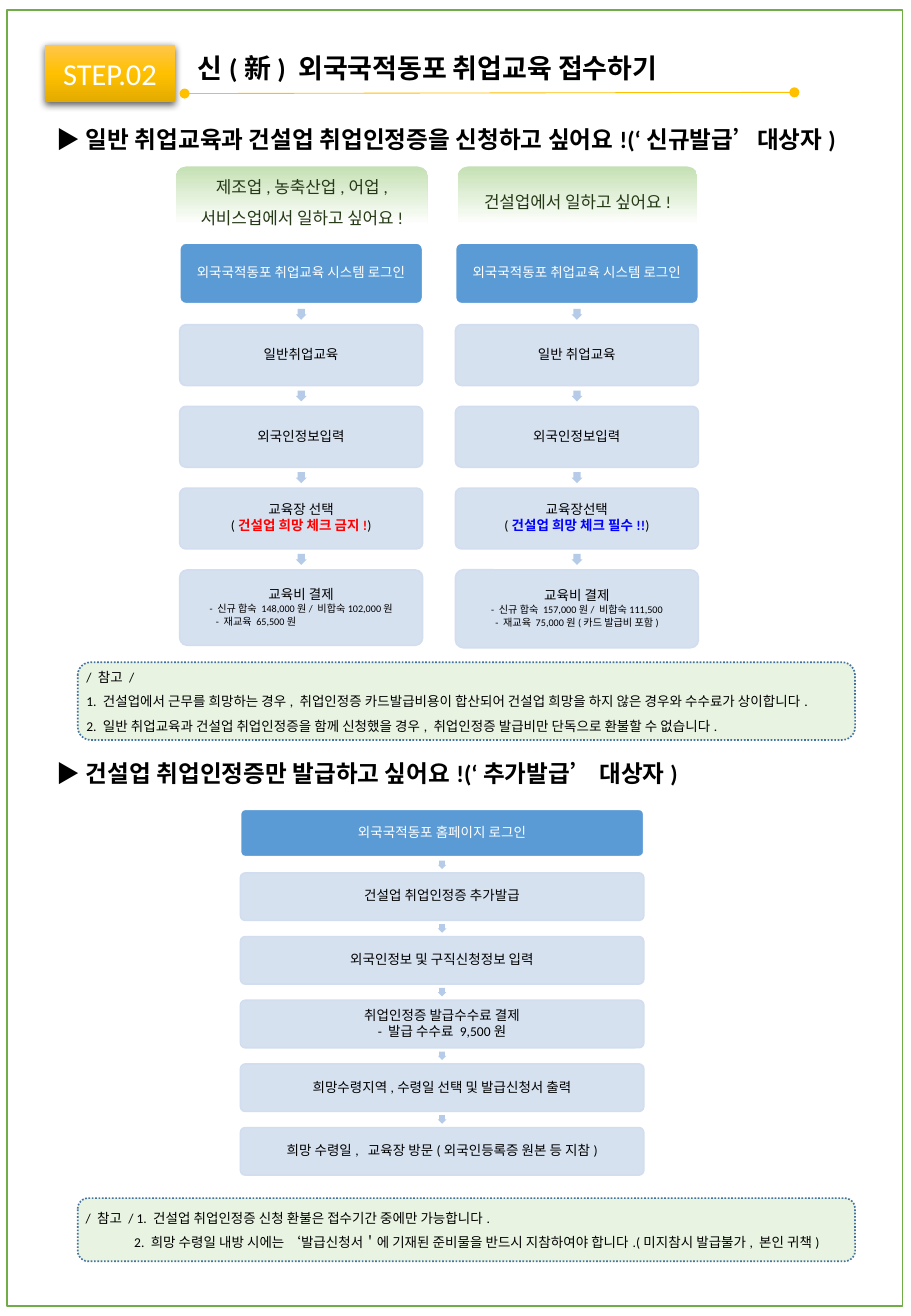
"""Builds the STEP.02 slide on registering for employment training."""
import copy

import lxml.etree
import pptx
import pptx.dml.color
import pptx.enum.dml
import pptx.enum.shapes
import pptx.enum.text
import pptx.oxml
import pptx.oxml.ns
import pptx.util

Inches = pptx.util.Inches
Pt = pptx.util.Pt
RGBColor = pptx.dml.color.RGBColor
Shapes = pptx.enum.shapes.MSO_SHAPE
Align = pptx.enum.text.PP_ALIGN
Anchor = pptx.enum.text.MSO_ANCHOR
qn = pptx.oxml.ns.qn

BLACK = RGBColor(0, 0, 0)
WHITE = RGBColor(0xFF, 0xFF, 0xFF)
RED = RGBColor(0xFF, 0, 0)
PURE_BLUE = RGBColor(0, 0, 0xFF)
BLUE = RGBColor(0x5B, 0x9B, 0xD5)
PALE_BLUE = RGBColor(0xD2, 0xDE, 0xEF)
ARROW_BLUE = RGBColor(0xB5, 0xCB, 0xE7)
NOTE_LINE = RGBColor(0x43, 0x73, 0x9E)
GREEN = RGBColor(0x70, 0xAD, 0x47)
PALE_GREEN = RGBColor(0xE2, 0xF0, 0xD9)
DARK_GREEN = RGBColor(0x25, 0x39, 0x17)
GOLD = RGBColor(0xFF, 0xC0, 0x00)
BADGE_STOPS = [RGBColor(0xFF, 0xC6, 0x4B), GOLD, RGBColor(0xE3, 0xAB, 0x00)]
TAB_STOPS = [RGBColor(0xC5, 0xE0, 0xB4), PALE_GREEN, WHITE]

deck = pptx.Presentation()
deck.slide_width = Inches(7.5)
deck.slide_height = Inches(10.83)
page = deck.slides.add_slide(deck.slide_layouts[5])


def write(box, lines, size, color, margins=(0.1, 0.05, 0.1, 0.05), align=Align.LEFT,
          spacing=1.0, after=0, anchor=Anchor.MIDDLE, bold=False):
    """Fill a shape with lines of (text, size, color, bold) spans; a leading number is an indent."""
    frame = box.text_frame
    frame.word_wrap = True
    frame.vertical_anchor = anchor
    frame.margin_left, frame.margin_top, frame.margin_right, frame.margin_bottom = map(Inches, margins)
    for number, line in enumerate(lines):
        para = frame.paragraphs[0] if number == 0 else frame.add_paragraph()
        para.alignment = align
        para.line_spacing = spacing
        para.space_before = Pt(0)
        para.space_after = Pt(after)
        spans = [(line,)] if isinstance(line, str) else line
        if isinstance(spans[0], float):
            para.alignment = Align.LEFT
            para._p.get_or_add_pPr().set("marL", str(Inches(spans[0])))
            spans = spans[1:]
        for text, *style in spans:
            span_size, span_color, span_bold = style or (size, color, bold)
            span = para.add_run()
            span.text = text
            span.font.name = "Calibri"
            span.font.size = Pt(span_size)
            span.font.color.rgb = span_color
            span.font.bold = span_bold


def add_block(kind, area, fill=None, line=None, alpha=None):
    """Add a preset shape with a plain, gradient or missing fill."""
    block = page.shapes.add_shape(kind, *map(Inches, area))
    block.shadow.inherit = False
    if isinstance(fill, list):
        block.fill.gradient()
        block.fill.gradient_angle = 270
        stop_list = block._element.spPr.find(".//" + qn("a:gsLst"))
        stop_list.append(copy.deepcopy(stop_list[0]))
        for stop, position, color in zip(block.fill.gradient_stops, (0, 0.5, 1), fill):
            stop.position = position
            stop.color.rgb = color
    elif fill is None:
        block.fill.background()
    else:
        block.fill.solid()
        block.fill.fore_color.rgb = fill
    if line is None:
        block.line.fill.background()
    else:
        block.line.color.rgb = line
        block.line.width = Pt(1)
    if alpha:
        color = block._element.spPr.find(qn("a:solidFill"))[0]
        lxml.etree.SubElement(color, qn("a:alpha")).set("val", str(alpha * 1000))
    return block


title = page.shapes.title
title.left, title.top, title.width, title.height = map(Inches, (1.53, 0.37, 4.17, 0.37))
write(title, ["신(新) 외국국적동포 취업교육 접수하기"], 16, BLACK, anchor=Anchor.TOP, bold=True)

add_block(Shapes.RECTANGLE, (0.06, 0.08, 7.37, 10.67), line=GREEN)

badge = add_block(Shapes.RECTANGLE, (0.37, 0.37, 1.07, 0.47), BADGE_STOPS)
write(badge, ["STEP.02"], 18, WHITE, align=Align.CENTER)
badge._element.spPr.find(qn("a:effectLst")).append(pptx.oxml.parse_xml(
    '<a:outerShdw xmlns:a="http://schemas.openxmlformats.org/drawingml/2006/main" blurRad="57150"'
    ' dist="19050" dir="5400000" algn="ctr" rotWithShape="0"><a:srgbClr val="000000">'
    '<a:alpha val="63000"/></a:srgbClr></a:outerShdw>'))

rule = page.shapes.add_connector(pptx.enum.shapes.MSO_CONNECTOR.STRAIGHT,
                                 Inches(1.52), Inches(0.77), Inches(6.54), Inches(0.76))
rule.line.color.rgb = GOLD
rule.line.width = Pt(0.5)
for end in ("a:headEnd", "a:tailEnd"):
    lxml.etree.SubElement(rule.line._ln, qn(end)).set("type", "oval")
lxml.etree.SubElement(rule._element.spPr, qn("a:effectLst"))

headings = [
    (0.98, 7.13, "▶ 일반 취업교육과 건설업 취업인정증을 신청하고 싶어요!(‘신규발급’대상자)"),
    (6.2, 5.75, "▶ 건설업 취업인정증만 발급하고 싶어요!(‘추가발급’ 대상자)"),
]
for top, width, text in headings:
    heading = page.shapes.add_textbox(Inches(0.37), Inches(top), Inches(width), Inches(0.34))
    write(heading, [text], 14, BLACK, anchor=Anchor.TOP, bold=True)

tabs = [
    (1.45, 2.07, ["제조업,농축산업,어업,", "서비스업에서 일하고 싶어요!"]),
    (3.77, 1.97, ["건설업에서 일하고 싶어요!"]),
]
for left, width, lines in tabs:
    tab = add_block(Shapes.ROUND_2_SAME_RECTANGLE, (left, 1.37, width, 0.48), TAB_STOPS)
    write(tab, lines, 10, DARK_GREEN, align=Align.CENTER, spacing=1.5)

plain = (8, BLACK, False)
small = (6, BLACK, False)
general_steps = [
    ["외국국적동포 취업교육 시스템 로그인"],
    ["일반취업교육"],
    ["외국인정보입력"],
    ["교육장 선택", [("(", *plain), ("건설업 희망 체크 금지!", 8, RED, True), (")", *plain)]],
    ["교육비 결제", [("- 신규 합숙 148,000원/ 비합숙102,000원", *small)],
     [0.28, ("- 재교육 65,500원", *small)]],
]
construction_steps = [
    ["외국국적동포 취업교육 시스템 로그인"],
    ["일반 취업교육"],
    ["외국인정보입력"],
    ["교육장선택", [("(", *plain), ("건설업 희망 체크 필수!!", 8, PURE_BLUE, True), (")", *plain)]],
    ["교육비 결제", [("- 신규 합숙 157,000원/ 비합숙111,500", *small)],
     [0.31, ("- 재교육 75,000원(카드 발급비 포함)", *small)]],
]
additional_steps = [
    ["외국국적동포 홈페이지 로그인"],
    ["건설업 취업인정증 추가발급"],
    ["외국인정보 및 구직신청정보 입력"],
    ["취업인정증 발급수수료 결제", "- 발급 수수료 9,500원"],
    ["희망수령지역,수령일 선택 및 발급신청서 출력"],
    ["희망 수령일,  교육장 방문(외국인등록증 원본 등 지참)"],
]
flows = [
    (1.48, 2, 4.69, 2, 0.5, 0.62, 0.09, general_steps),
    (3.75, 2, 4.69, 2, 0.5, 0.64, 0.09, construction_steps),
    (1.98, 6.66, 9.28, 3.32, 0.39, 0.39, 0.07, additional_steps),
]
for left, first_top, last_top, width, height, last_height, arrow_size, steps in flows:
    pitch = (last_top - first_top) / (len(steps) - 1)
    for index, lines in enumerate(steps):
        top = first_top + index * pitch
        is_first, is_last = index == 0, index == len(steps) - 1
        area = (left, top, width, last_height if is_last else height)
        if is_first:
            card = add_block(Shapes.ROUNDED_RECTANGLE, area, BLUE, WHITE)
        else:
            card = add_block(Shapes.ROUNDED_RECTANGLE, area, PALE_BLUE, PALE_BLUE, 90)
        card.adjustments[0] = 0.1
        write(card, lines, 8, WHITE if is_first else BLACK, margins=(0, 0, 0, 0),
              align=Align.CENTER, spacing=0.9, after=1)
        if not is_last:
            arrow_left = left + (width - arrow_size) / 2
            arrow_top = top + (height + pitch - arrow_size) / 2
            arrow = add_block(Shapes.DOWN_ARROW, (arrow_left, arrow_top, arrow_size, arrow_size), ARROW_BLUE)
            arrow.adjustments[0] = 0.67

notes = [
    (5.45, 0.64, [
        "/ 참고 /",
        "1. 건설업에서 근무를 희망하는 경우, 취업인정증 카드발급비용이 합산되어 건설업 희망을 하지 않은 경우와 수수료가 상이합니다.",
        "2. 일반 취업교육과 건설업 취업인정증을 함께 신청했을 경우, 취업인정증 발급비만 단독으로 환불할 수 없습니다.",
    ]),
    (9.86, 0.52, [
        "/ 참고 / 1. 건설업 취업인정증 신청 환불은 접수기간 중에만 가능합니다.",
        [0.4, ("2. 희망 수령일 내방 시에는 ‘발급신청서＇에 기재된 준비물을 반드시 지참하여야 합니다."
               "(미지참시 발급불가, 본인 귀책)", *plain)],
    ]),
]
for top, height, lines in notes:
    note = add_block(Shapes.ROUNDED_RECTANGLE, (0.64, top, 6.4, height), PALE_GREEN, NOTE_LINE, 77)
    note.line.dash_style = pptx.enum.dml.MSO_LINE.ROUND_DOT
    write(note, lines, 8, BLACK, margins=(0.04, 0, 0, 0.06), spacing=1.5)

deck.save("out.pptx")
